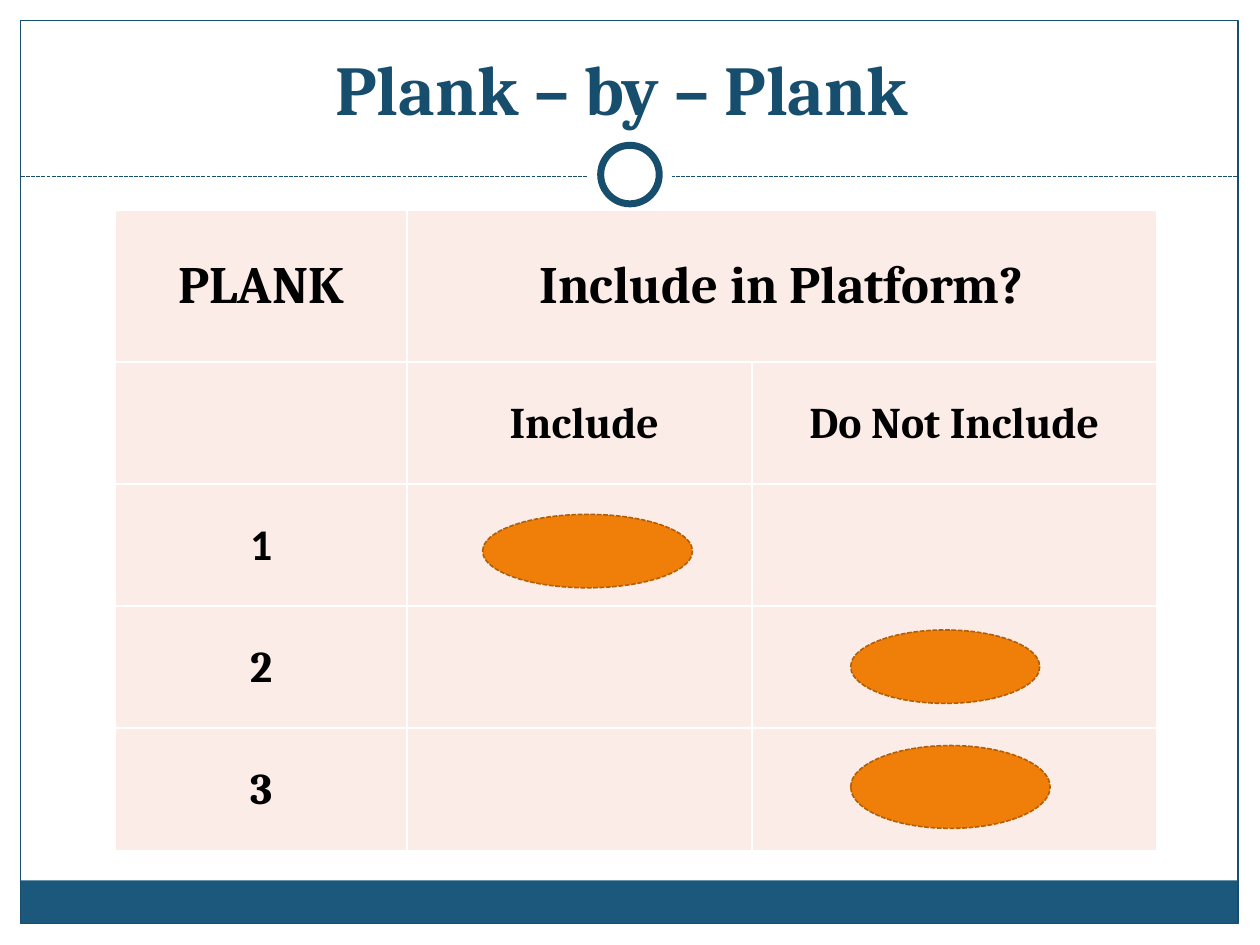
"""Build the plank-by-plank voting slide with its ballot table and marks."""
import lxml.etree
import pptx
import pptx.dml.color
import pptx.enum.dml
import pptx.enum.shapes
import pptx.enum.text
import pptx.oxml.ns
import pptx.util
from pptx.util import Cm

WHITE = pptx.dml.color.RGBColor(0xFF, 0xFF, 0xFF)
BLACK = pptx.dml.color.RGBColor(0x00, 0x00, 0x00)
NAVY = pptx.dml.color.RGBColor(0x18, 0x4E, 0x6D)
BLUE = pptx.dml.color.RGBColor(0x1B, 0x58, 0x7C)
BLUSH = pptx.dml.color.RGBColor(0xFC, 0xEC, 0xE7)
ORANGE = pptx.dml.color.RGBColor(0xF0, 0x7F, 0x09)
BROWN = pptx.dml.color.RGBColor(0xB2, 0x5E, 0x07)

RECTANGLE = pptx.enum.shapes.MSO_SHAPE.RECTANGLE
OVAL = pptx.enum.shapes.MSO_SHAPE.OVAL
DOTTED = pptx.enum.dml.MSO_LINE.SQUARE_DOT

COLUMN_WIDTHS = (5.87, 6.96, 8.15)
ROW_HEIGHTS = (3.07, 2.46, 2.46, 2.46, 2.46)
BALLOT = (
    ("PLANK", "Include in Platform?", ""),
    ("", " Include", "Do Not Include"),
    ("1", "", ""),
    ("2", "", ""),
    ("3", "", ""),
)
MARKS = (
    (17.15, 12.7, 3.81, 1.48),
    (9.73, 10.37, 4.23, 1.48),
    (17.15, 15.03, 4.02, 1.67),
)


def style_line(line, color, width, dash=None):
    """Give a line its colour, width in points and optional dash."""
    line.color.rgb = color
    line.width = pptx.util.Pt(width)
    if dash is not None:
        line.dash_style = dash


def add_figure(slide, kind, box, fill=None, outline=None):
    """Add a preset shape; outline holds colour, width and optional dash."""
    figure = slide.shapes.add_shape(kind, *map(Cm, box))
    figure.shadow.inherit = False
    if fill is None:
        figure.fill.background()
    else:
        figure.fill.solid()
        figure.fill.fore_color.rgb = fill
    if outline is None:
        figure.line.fill.background()
    else:
        style_line(figure.line, *outline)


def add_divider(slide, left, right, top):
    """Add the dotted horizontal rule under the title."""
    divider = slide.shapes.add_connector(
        pptx.enum.shapes.MSO_CONNECTOR.STRAIGHT, Cm(left), Cm(top), Cm(right), Cm(top))
    style_line(divider.line, NAVY, 0.75, DOTTED)
    properties = divider._element.spPr
    lxml.etree.SubElement(properties, pptx.oxml.ns.qn("a:effectLst"))


def write(frame, text, size, color, font="Cambria"):
    """Write one centred bold paragraph."""
    frame.text = text
    paragraph = frame.paragraphs[0]
    paragraph.alignment = pptx.enum.text.PP_ALIGN.CENTER
    for run in paragraph.runs:
        run.font.name = font
        run.font.size = pptx.util.Pt(size)
        run.font.bold = True
        run.font.color.rgb = color


def add_title(slide, text):
    """Add the bottom-anchored slide title."""
    title = slide.shapes.add_textbox(Cm(0.84), Cm(0.84), Cm(23.7), Cm(1.9))
    title.text_frame.word_wrap = True
    title.text_frame.vertical_anchor = pptx.enum.text.MSO_ANCHOR.BOTTOM
    write(title.text_frame, text, 40, NAVY)


def add_borders(cell):
    """Draw white one-point borders on all four sides of a cell."""
    properties = cell._tc.get_or_add_tcPr()
    for side in ("a:lnL", "a:lnR", "a:lnT", "a:lnB"):
        border = lxml.etree.SubElement(properties, pptx.oxml.ns.qn(side), w="12700")
        fill = lxml.etree.SubElement(border, pptx.oxml.ns.qn("a:solidFill"))
        lxml.etree.SubElement(fill, pptx.oxml.ns.qn("a:srgbClr"), val=str(WHITE))


def add_ballot(slide):
    """Add the table of planks and choices."""
    ballot = slide.shapes.add_table(
        len(ROW_HEIGHTS), len(COLUMN_WIDTHS), Cm(2.33), Cm(4.23),
        Cm(sum(COLUMN_WIDTHS)), Cm(sum(ROW_HEIGHTS))).table
    ballot.first_row = False
    ballot.horz_banding = False
    for column, width in zip(ballot.columns, COLUMN_WIDTHS):
        column.width = Cm(width)
    for row, height in zip(ballot.rows, ROW_HEIGHTS):
        row.height = Cm(height)
    for row_index, texts in enumerate(BALLOT):
        for column_index, text in enumerate(texts):
            cell = ballot.cell(row_index, column_index)
            add_borders(cell)
            cell.fill.solid()
            cell.fill.fore_color.rgb = BLUSH
            if text:
                cell.margin_left = cell.margin_right = cell.margin_top = Cm(0.03)
                cell.margin_bottom = 0
                cell.vertical_anchor = pptx.enum.text.MSO_ANCHOR.MIDDLE
                write(cell.text_frame, text, 30 if row_index == 0 else 25, BLACK,
                      "Calibri" if text == "1" else "Cambria")
    ballot.cell(0, 1).merge(ballot.cell(0, 2))


def main():
    """Build and save the slide."""
    presentation = pptx.Presentation()
    presentation.slide_width = Cm(25.4)
    presentation.slide_height = Cm(19.05)
    slide = presentation.slides.add_slide(presentation.slide_layouts[6])
    add_figure(slide, RECTANGLE, (0.42, 17.75, 24.54, 0.87), BLUE)
    add_figure(slide, RECTANGLE, (0.42, 0.42, 24.54, 18.2), outline=(NAVY, 0.75))
    add_divider(slide, 0.42, 24.96, 3.56)
    add_figure(slide, OVAL, (11.85, 2.67, 1.7, 1.7), WHITE)
    add_figure(slide, OVAL, (12.11, 2.93, 1.18, 1.18), WHITE, (NAVY, 4))
    add_title(slide, "Plank – by – Plank ")
    add_ballot(slide)
    for box in MARKS:
        add_figure(slide, OVAL, box, ORANGE, (BROWN, 0.9, DOTTED))
    presentation.save("out.pptx")


if __name__ == "__main__":
    main()
